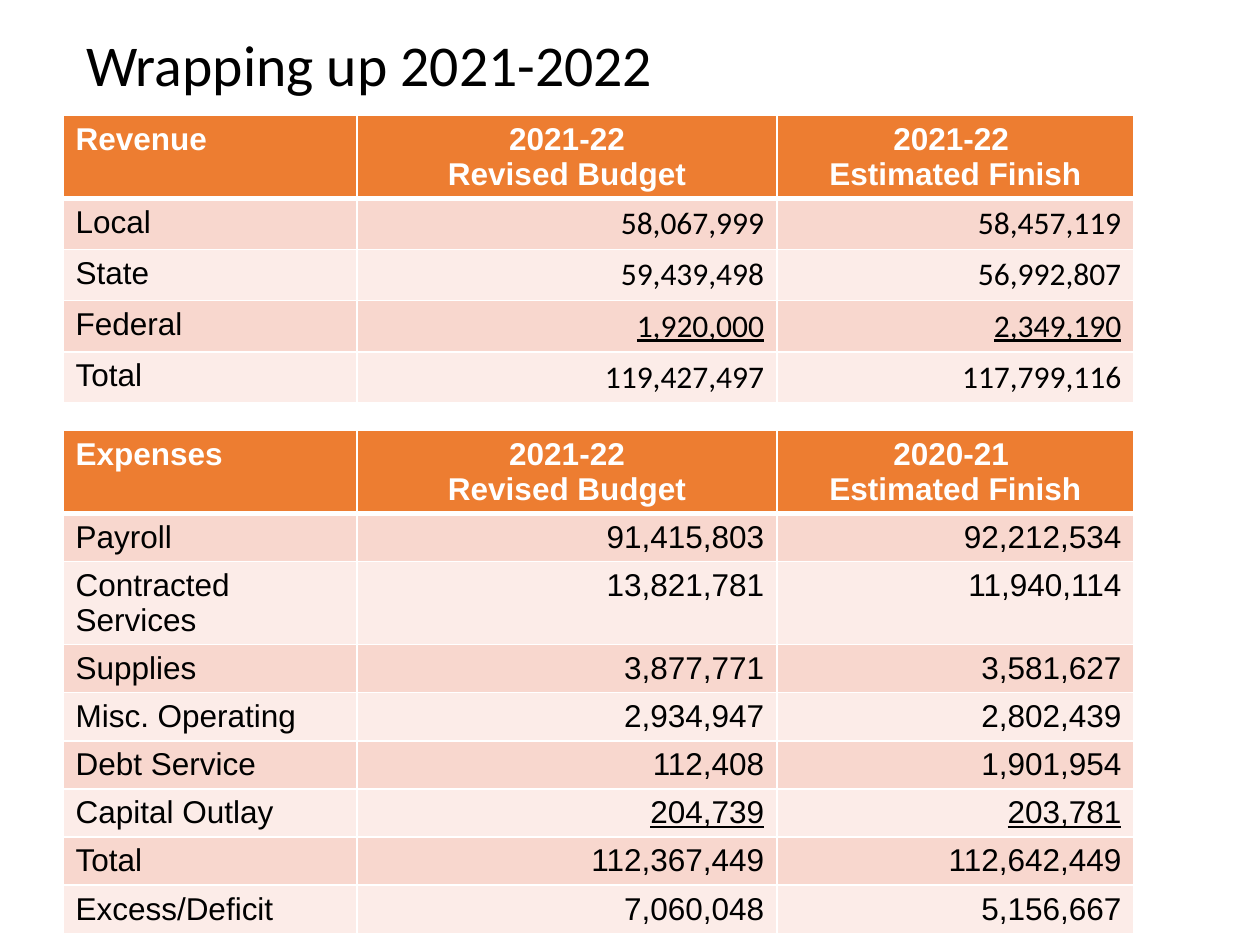
import pptx
import pptx.dml.color
import pptx.enum.text
import pptx.oxml
import pptx.oxml.ns
import pptx.util
from pptx.util import Cm

COLORS = {"header": "ED7D31", "odd": "F8D7CE", "even": "FCECE8", "white": "FFFFFF", "black": "000000"}
ALIGN = pptx.enum.text.PP_ALIGN
COLUMN_WIDTHS = (5.93, 8.46, 7.2)
TWO_LINE_HEIGHT = 1.66
REVENUE = [
    ("Revenue", "2021-22\nRevised Budget", "2021-22 \nEstimated Finish"),
    ("Local", "58,067,999", "58,457,119"),
    ("State", "59,439,498", "56,992,807"),
    ("Federal", "1,920,000", "2,349,190"),
    ("Total", "119,427,497", "117,799,116"),
]
EXPENSES = [
    ("Expenses", "2021-22\nRevised Budget", "2020-21 \nEstimated Finish"),
    ("Payroll", "91,415,803", "92,212,534"),
    ("Contracted Services", "13,821,781", "11,940,114"),
    ("Supplies", "3,877,771", "3,581,627"),
    ("Misc. Operating", "2,934,947", "2,802,439"),
    ("Debt Service", "112,408", "1,901,954"),
    ("Capital Outlay", "204,739", "203,781"),
    ("Total", "112,367,449", "112,642,449"),
    ("Excess/Deficit", "7,060,048", "5,156,667"),
]


def rgb(name):
    """Return the named colour."""
    return pptx.dml.color.RGBColor.from_string(COLORS[name])


def format_text(text_frame, size, font, color, align=ALIGN.LEFT, bold=False, underline=False):
    """Format every paragraph and run of a text frame."""
    for paragraph in text_frame.paragraphs:
        paragraph.alignment = align
        for run in paragraph.runs:
            run.font.size = pptx.util.Pt(size)
            run.font.name = font
            run.font.color.rgb = rgb(color)
            run.font.bold = bold
            run.font.underline = underline


def set_borders(cell, bottom, top):
    """Give a cell white borders, with widths in points for bottom and top."""
    properties = cell._tc.get_or_add_tcPr()
    widths = {"lnL": 1, "lnR": 1, "lnT": top, "lnB": bottom}
    for position, (tag, width) in enumerate(widths.items()):
        line = pptx.oxml.parse_xml(
            f'<a:{tag} {pptx.oxml.ns.nsdecls("a")} w="{pptx.util.Pt(width)}"><a:solidFill>'
            f'<a:srgbClr val="{COLORS["white"]}"/></a:solidFill></a:{tag}>'
        )
        properties.insert(position, line)


def add_title(slide, text):
    """Add the slide title."""
    shape = slide.shapes.add_textbox(Cm(1.49), Cm(0.41), Cm(22.73), Cm(1.9))
    text_frame = shape.text_frame
    text_frame.word_wrap = True
    text_frame.vertical_anchor = pptx.enum.text.MSO_ANCHOR.MIDDLE
    text_frame.text = text
    text_frame.paragraphs[0].line_spacing = 0.9
    format_text(text_frame, 33, "Calibri", "black")


def add_budget_table(slide, rows, top, heights, number_font, underlined):
    """Add a banded table with a header row and right-aligned amounts."""
    shape = slide.shapes.add_table(
        len(rows), len(COLUMN_WIDTHS), Cm(1.27), Cm(top), Cm(sum(COLUMN_WIDTHS)), Cm(sum(heights))
    )
    table = shape.table
    for column, width in zip(table.columns, COLUMN_WIDTHS):
        column.width = Cm(width)
    for row_index, values in enumerate(rows):
        table.rows[row_index].height = Cm(heights[row_index])
        is_header = row_index == 0
        fill = "header" if is_header else ("even", "odd")[row_index % 2]
        for column_index, value in enumerate(values):
            cell = table.cell(row_index, column_index)
            cell.text_frame.text = value
            cell.margin_bottom = Cm(0.02)
            cell.fill.solid()
            cell.fill.fore_color.rgb = rgb(fill)
            set_borders(cell, bottom=3 if is_header else 1, top=3 if row_index == 1 else 1)
            is_label = column_index == 0
            number_align = ALIGN.CENTER if is_header else ALIGN.RIGHT
            format_text(
                cell.text_frame,
                18,
                "Arial" if is_header or is_label else number_font,
                "white" if is_header else "black",
                ALIGN.LEFT if is_label else number_align,
                bold=is_header,
                underline=not is_label and values[0] == underlined,
            )


def main():
    """Build and save the slide."""
    presentation = pptx.Presentation()
    presentation.slide_width, presentation.slide_height = Cm(25.4), Cm(19.05)
    slide = presentation.slides.add_slide(presentation.slide_layouts[6])
    add_title(slide, "Wrapping up 2021-2022")
    revenue_heights = [TWO_LINE_HEIGHT] + [1.03] * 4
    expense_heights = [TWO_LINE_HEIGHT, 0.97, TWO_LINE_HEIGHT] + [0.97] * 6
    add_budget_table(slide, REVENUE, 2.33, revenue_heights, "Calibri", "Federal")
    add_budget_table(slide, EXPENSES, 8.68, expense_heights, "Arial", "Capital Outlay")
    presentation.save("out.pptx")


if __name__ == "__main__":
    main()
